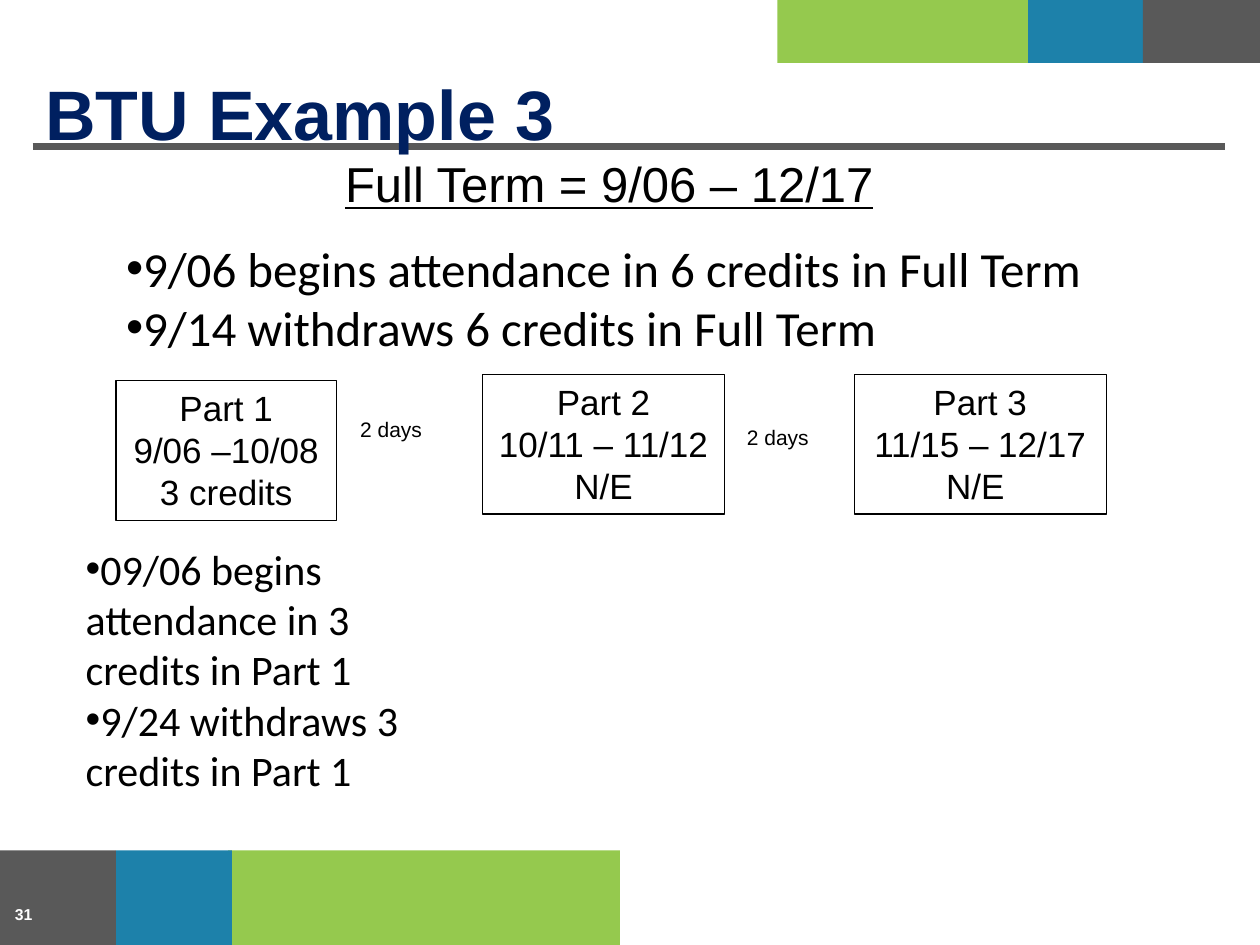
"""Build the BTU Example 3 slide on a grid of 100 columns by 75 rows."""
from pptx import Presentation
from pptx.dml.color import RGBColor
from pptx.enum.shapes import MSO_CONNECTOR, MSO_SHAPE
from pptx.enum.text import MSO_ANCHOR, PP_ALIGN
from pptx.oxml.ns import qn
from pptx.util import Inches, Pt
from lxml.etree import SubElement

deck = Presentation()
deck.slide_width, deck.slide_height = Inches(10), Inches(7.5)
col, row = deck.slide_width / 100, deck.slide_height / 75
slide = deck.slides.add_slide(deck.slide_layouts[3])
shapes = slide.shapes
title, terms, parts = slide.placeholders


def grid(left, top, wide, high):
    """Turn columns and rows into slide lengths."""
    return int(left * col), int(top * row), int(wide * col), int(high * row)


def write(shape, text, size, face="Arial", hue="000000", align=PP_ALIGN.LEFT,
          anchor=MSO_ANCHOR.TOP, bold=False, line=False, bullet=False):
    """Fill a shape with text in one style."""
    frame = shape.text_frame
    frame.text = text
    frame.word_wrap = True
    frame.vertical_anchor = anchor
    for para in frame.paragraphs:
        para.alignment = align
        para.space_before = Pt(0)
        if bullet:
            props = para._p.get_or_add_pPr()
            props.set("marL", "0")
            props.set("indent", "0")
            SubElement(props, qn("a:buFont"), typeface="Arial")
            SubElement(props, qn("a:buChar"), char="•")
        for run in para.runs:
            font = run.font
            font.name, font.size = face, Pt(size)
            font.bold, font.underline = bold, line
            font.color.rgb = RGBColor.from_string(hue)


green, blue, gray = "95C94E", "1D81AA", "595959"
bands = [
    (67.5, 7.7, [(18.1, 31.1, green), (9.2, 9.2, blue), (-0.2, 9.4, gray)]),
    (0, 5, [(61.7, 20.2, green), (81.6, 9.2, blue), (90.7, 9.4, gray)]),
]
for top, high, blocks in bands:
    for left, wide, hue in blocks:
        band = shapes.add_shape(MSO_SHAPE.RECTANGLE, *grid(left, top, wide, high))
        band.shadow.inherit = False
        band.fill.solid()
        band.fill.fore_color.rgb = RGBColor.from_string(hue)
        band.line.fill.background()

rule = shapes.add_connector(MSO_CONNECTOR.STRAIGHT, *grid(2.6, 11.6, 97.2, 11.6))
rule.line.color.rgb = RGBColor.from_string(gray)
rule.line.width = Pt(4)
SubElement(rule._element.spPr, qn("a:effectLst"))

title.left, title.top, title.width, title.height = grid(2.6, 4.5, 93.5, 7.1)
write(title, "BTU Example 3", 40, hue="002060", bold=True)
title.text_frame.margin_top = int(1.1 * row)
title.text_frame.margin_bottom = 0
rule._element.addnext(title._element)

page = shapes.add_textbox(*grid(0.2, 70.6, 23.3, 4))
write(page, "31", 9, hue="FFFFFF", anchor=MSO_ANCHOR.MIDDLE, bold=True)

boxes = [
    (9.2, 30.2, 17.5, "Part 1\n9/06 –10/08\n3 credits"),
    (38.3, 29.7, 19.2, "Part 2\n10/11 – 11/12\nN/E"),
    (67.8, 29.7, 20, "Part 3\n11/15 – 12/17\nN/E "),
]
for left, top, wide, text in boxes:
    box = shapes.add_shape(MSO_SHAPE.RECTANGLE, *grid(left, top, wide, 11.1))
    box.shadow.inherit = False
    box.fill.background()
    box.line.color.rgb = RGBColor.from_string("000000")
    box.line.width = Pt(0.75)
    write(box, text, 20, align=PP_ALIGN.CENTER)

for left, top, wide in [(27.6, 32.6, 9.2), (58.3, 33.2, 7.5)]:
    gap = shapes.add_textbox(*grid(left, top, wide, 3))
    write(gap, "2 days", 12)

lists = [
    (terms, (9, 18.4, 80.5, 15.1), 28,
     "9/06 begins attendance in 6 credits in Full Term\n"
     "9/14 withdraws 6 credits in Full Term"),
    (parts, (5.8, 42.6, 29.1, 21.2), 24,
     "09/06 begins attendance in 3 credits in Part 1\n"
     "9/24 withdraws 3 credits in Part 1"),
]
for body, place, size, text in lists:
    body.left, body.top, body.width, body.height = grid(*place)
    write(body, text, size, face="Calibri", bullet=True)

span = shapes.add_textbox(*grid(9.2, 11.7, 78.3, 10.4))
write(span, "Full Term = 9/06 – 12/17", 28, align=PP_ALIGN.CENTER, line=True)

deck.save("out.pptx")
